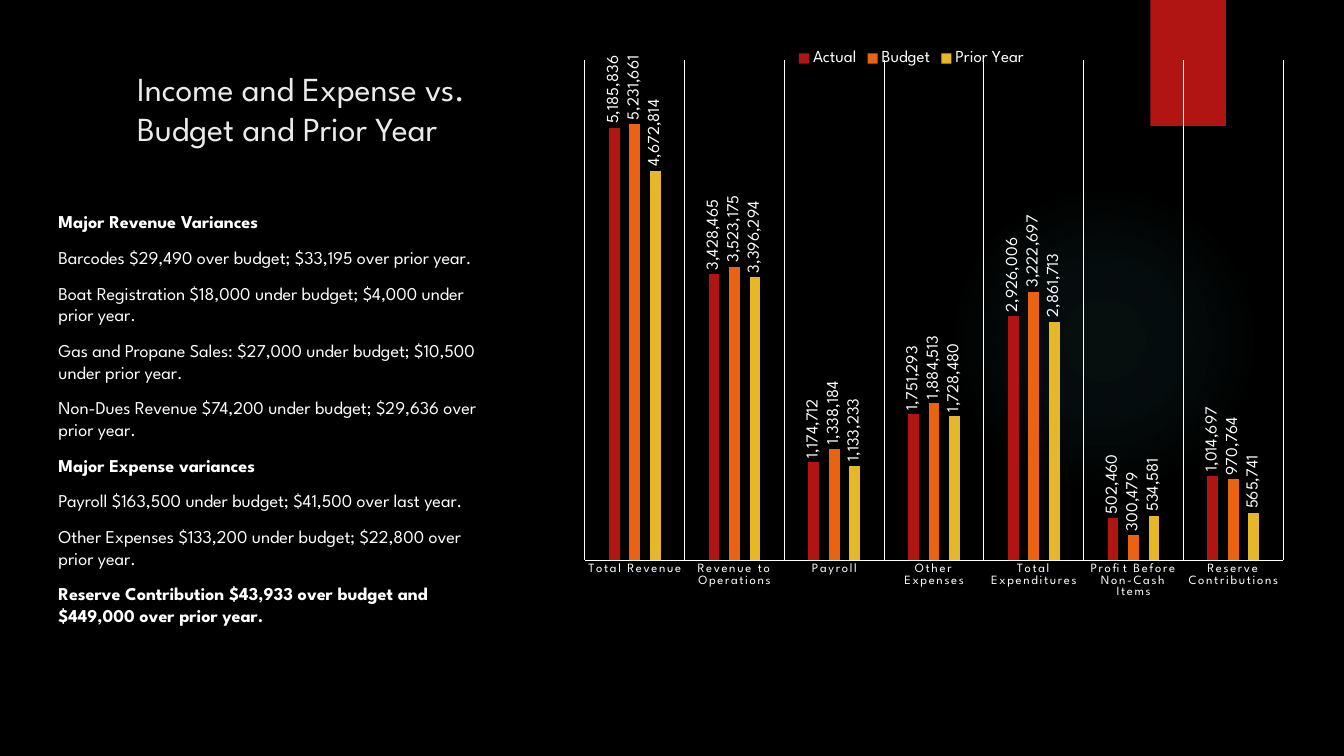
from lxml import etree
from pptx import Presentation
from pptx import util as u
from pptx.chart.data import CategoryChartData
from pptx.dml.color import RGBColor
from pptx.enum import chart as ch, shapes, text
from pptx.oxml import parse_xml
from pptx.oxml.ns import nsdecls, qn

W, H = 13.33, 7.5
FONT = "League Spartan"
WHITE, RED, ORANGE, YELLOW = "FFFFFF", "B01513", "EA6312", "E6B729"

VARIANCES = [  # text, bold
    ("Major Revenue Variances", True),
    ("Barcodes $29,490 over budget; $33,195 over prior year.", False),
    ("Boat Registration $18,000 under budget; $4,000 under prior year.", False),
    ("Gas and Propane Sales: $27,000 under budget; $10,500 under prior year.", False),
    ("Non-Dues Revenue $74,200 under budget; $29,636 over prior year.", False),
    ("Major Expense variances", True),
    ("Payroll $163,500 under budget; $41,500 over last year.", False),
    ("Other Expenses $133,200 under budget; $22,800 over prior year.", False),
    ("Reserve Contribution $43,933 over budget and $449,000 over prior year.", True),
]
CATEGORIES = ["Total Revenue", "Revenue to Operations", "Payroll", "Other Expenses",
              "Total Expenditures", "Profit Before Non-Cash Items",
              "Reserve Contributions"]
SERIES = [
    ("Actual", RED, [5185836, 3428465, 1174712, 1751293, 2926006, 502460, 1014697]),
    ("Budget", ORANGE, [5231661, 3523175, 1338184, 1884513, 3222697, 300479, 970764]),
    ("Prior Year", YELLOW, [4672814, 3396294, 1133233, 1728480, 2861713, 534581, 565741]),
]


def box(left, top, width, height):
    return [u.Inches(v) for v in (left, top, width, height)]


def paint(color_format, hex_color):
    color_format.rgb = RGBColor.from_string(hex_color)


def style(font, size, hex_color=WHITE, bold=False):
    font.name, font.size, font.bold = FONT, u.Pt(size), bold
    paint(font.color, hex_color)


def add_plain(s, kind, place, hex_color):
    sp = s.shapes.add_shape(kind, *box(*place))
    sp.shadow.inherit = False
    sp.fill.solid()
    paint(sp.fill.fore_color, hex_color)
    sp.line.fill.background()
    return sp


def add_glow(s, place, hex_color, stops):
    """Circle that fades out from its centre; stops are (position, opacity) in percent."""
    sp = add_plain(s, shapes.MSO_SHAPE.OVAL, place, hex_color)
    gs = "".join(f'<a:gs pos="{pos * 1000}"><a:srgbClr val="{hex_color}">'
                 f'<a:alpha val="{alpha * 1000}"/></a:srgbClr></a:gs>'
                 for pos, alpha in stops)
    gradient = parse_xml(
        f'<a:gradFill {nsdecls("a")}><a:gsLst>{gs}</a:gsLst><a:path path="circle">'
        '<a:fillToRect l="50000" t="50000" r="50000" b="50000"/></a:path></a:gradFill>')
    spPr = sp._element.spPr
    spPr.replace(spPr.find(qn("a:solidFill")), gradient)


def fill_placeholder(sp, place, paragraphs, size, hex_color, space=0):
    sp.left, sp.top, sp.width, sp.height = box(*place)
    tf = sp.text_frame
    tf.word_wrap = True
    tf.auto_size = text.MSO_AUTO_SIZE.NONE
    tf.vertical_anchor = text.MSO_ANCHOR.TOP
    for i, (words, bold) in enumerate(paragraphs):
        p = tf.paragraphs[0] if i == 0 else tf.add_paragraph()
        pPr = p._p.get_or_add_pPr()
        pPr.set("marL", "0")
        pPr.set("indent", "0")
        etree.SubElement(pPr, qn("a:buNone"))
        p.alignment = text.PP_ALIGN.LEFT
        p.space_before = u.Pt(space if i else 0)
        r = p.add_run()
        r.text = words
        style(r.font, size, hex_color, bold)


def set_plot_area(chart, x, y, w, h):
    """Inner plot area, as shares of the chart's size."""
    area = chart._chartSpace.chart.plotArea
    for old in area.findall(qn("c:layout")):
        area.remove(old)
    sizes = "".join(f'<c:{tag} val="{v}"/>' for tag, v in zip("xywh", (x, y, w, h)))
    area.insert(0, parse_xml(
        f'<c:layout {nsdecls("c")}><c:manualLayout><c:layoutTarget val="inner"/>'
        f'<c:xMode val="edge"/><c:yMode val="edge"/>{sizes}</c:manualLayout></c:layout>'))


def format_axes(chart):
    cat, val = chart.category_axis, chart.value_axis
    cat.major_tick_mark = ch.XL_TICK_MARK.NONE
    cat.has_major_gridlines = True
    for line in (cat.format.line, cat.major_gridlines.format.line):
        paint(line.color, WHITE)
        line.width = u.Pt(0.75)
    style(cat.tick_labels.font, 9)
    cat.tick_labels.font._element.set("spc", "120")
    val.minimum_scale, val.maximum_scale = 0, 6000000
    val.has_major_gridlines = False
    val.tick_labels.number_format = "#,##0"
    val.tick_labels.number_format_is_linked = False
    val.visible = False


def format_series(series, hex_color):
    series.format.fill.solid()
    paint(series.format.fill.fore_color, hex_color)
    series.invert_if_negative = False
    labels = series.data_labels
    labels.show_value = True
    labels.position = ch.XL_LABEL_POSITION.OUTSIDE_END
    labels.number_format, labels.number_format_is_linked = "#,##0", False
    style(labels.font, 12)
    body = labels._element.find(qn("c:txPr")).find(qn("a:bodyPr"))
    body.set("rot", "-5400000")
    body.set("vert", "horz")


def add_columns(s, place):
    data = CategoryChartData(number_format="#,##0")
    data.categories = CATEGORIES
    for name, _, values in SERIES:
        data.add_series(name, values)
    chart = s.shapes.add_chart(ch.XL_CHART_TYPE.COLUMN_CLUSTERED, *box(*place), data).chart
    chart.has_title = False
    style(chart.font, 12)
    chart.has_legend = True
    chart.legend.position = ch.XL_LEGEND_POSITION.TOP
    chart.legend.include_in_layout = False
    style(chart.legend.font, 12)
    plot = chart.plots[0]
    plot.vary_by_categories = False
    plot.gap_width, plot.overlap = 444, -90
    for series, (_, hex_color, _) in zip(plot.series, SERIES):
        format_series(series, hex_color)
    format_axes(chart)
    set_plot_area(chart, 0.075, 0.03, 0.909, 0.72)


def main():
    prs = Presentation()
    prs.slide_width, prs.slide_height = u.Inches(W), u.Inches(H)
    s = prs.slides.add_slide(prs.slide_layouts[1])
    s.background.fill.solid()
    paint(s.background.fill.fore_color, "000000")

    # Backdrop
    add_glow(s, (9.41, 1.83, 3.08, 3.08), "50B9C1", [(0, 7), (36, 6), (69, 0)])
    add_plain(s, shapes.MSO_SHAPE.RECTANGLE, (11.41, 0, 0.75, H / 6), RED)

    # Title and variances, sharing one right edge
    right, split = 4.98, 2.04
    fill_placeholder(s.shapes.title, (1.26, 0.62, right - 1.26, split - 0.62),
                     [("Income and Expense vs. Budget and Prior Year", False)], 24, "EBEBEB")
    fill_placeholder(s.placeholders[1], (0.48, split, right - 0.48, 4.55),
                     VARIANCES, 12.9, WHITE, space=10)

    # Chart
    add_columns(s, (5.23, 0.39, 7.62, 6.89))
    prs.save("out.pptx")


if __name__ == "__main__":
    main()
